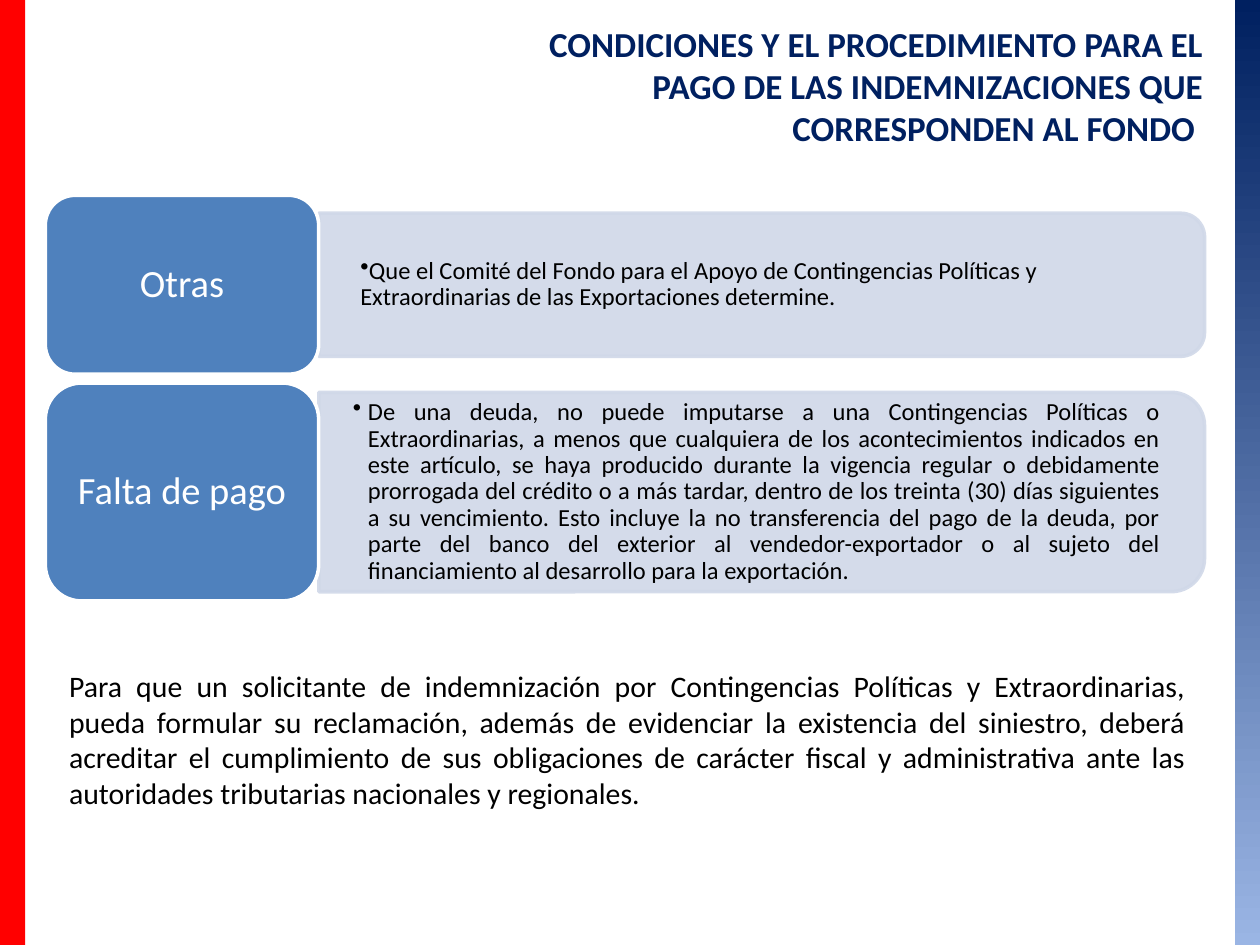
import dataclasses

import lxml.etree
import pptx
import pptx.dml.color
import pptx.enum.shapes
import pptx.enum.text
import pptx.oxml.ns
import pptx.util

Inches = pptx.util.Inches
Pt = pptx.util.Pt
Align = pptx.enum.text.PP_ALIGN
Anchor = pptx.enum.text.MSO_ANCHOR
Shape = pptx.enum.shapes.MSO_SHAPE
qn = pptx.oxml.ns.qn


@dataclasses.dataclass(frozen=True)
class Theme:
    font: str = "Calibri"
    red: str = "FF0000"
    navy: str = "002060"
    sky: str = "9AB5E4"
    tile: str = "4F81BD"
    panel: str = "D0D8E8"
    white: str = "FFFFFF"
    black: str = "000000"
    title_size: int = 20
    tile_size: int = 22
    detail_size: int = 14
    closing_size: int = 17


@dataclasses.dataclass(frozen=True)
class Box:
    left: float
    top: float
    width: float
    height: float

    def lengths(self):
        return [Inches(value) for value in dataclasses.astuple(self)]


@dataclasses.dataclass(frozen=True)
class Topic:
    label: str
    detail: str
    box: Box
    panel_share: float  # panel height as a share of the row height
    margin: float
    indent: float
    alignment: Align


THEME = Theme()
WIDTH, HEIGHT = 10, 7.5
BAR_WIDTH = 0.02 * WIDTH
TILE_WIDTH = 2.17
ROW_LEFT, ROW_WIDTH = 0.36, 9.2

TOPICS = [
    Topic("Otras",
          "Que el Comité del Fondo para el Apoyo de Contingencias Políticas y "
          "Extraordinarias de las Exportaciones determine.",
          Box(ROW_LEFT, 1.55, ROW_WIDTH, 1.42), 0.8, 0.06, 0, Align.LEFT),
    Topic("Falta de pago",
          "De una deuda, no puede imputarse a una Contingencias Políticas o "
          "Extraordinarias, a menos que cualquiera de los acontecimientos "
          "indicados en este artículo, se haya producido durante la vigencia "
          "regular o debidamente prorrogada del crédito o a más tardar, dentro "
          "de los treinta (30) días siguientes a su vencimiento. Esto incluye "
          "la no transferencia del pago de la deuda, por parte del banco del "
          "exterior al vendedor-exportador o al sujeto del financiamiento al "
          "desarrollo para la exportación.",
          Box(ROW_LEFT, 3.04, ROW_WIDTH, 1.73), 0.915, 0.12, -0.12,
          Align.JUSTIFY),
]
TITLE = ("CONDICIONES Y EL PROCEDIMIENTO PARA EL PAGO DE LAS "
         "INDEMNIZACIONES QUE CORRESPONDEN AL FONDO ")
CLOSING = ("Para que un solicitante de indemnización por Contingencias Políticas "
           "y Extraordinarias, pueda formular su reclamación, además de "
           "evidenciar la existencia del siniestro, deberá acreditar el "
           "cumplimiento de sus obligaciones de carácter fiscal y "
           "administrativa ante las autoridades tributarias nacionales y "
           "regionales.")


def rgb(value):
    return pptx.dml.color.RGBColor.from_string(value)


def write(shape, text, size, color, alignment, anchor=Anchor.TOP,
          insets=(0.1, 0.05), spacing=1.0, bold=False):
    frame = shape.text_frame
    frame.word_wrap = True
    frame.auto_size = pptx.enum.text.MSO_AUTO_SIZE.NONE
    frame.vertical_anchor = anchor
    frame.margin_left = frame.margin_right = Inches(insets[0])
    frame.margin_top = frame.margin_bottom = Inches(insets[1])
    paragraph = frame.paragraphs[0]
    paragraph.alignment = alignment
    paragraph.line_spacing = spacing
    run = paragraph.add_run()
    run.text = text
    run.font.name = THEME.font
    run.font.size = Pt(size)
    run.font.bold = bold
    run.font.color.rgb = rgb(color)
    return paragraph


def add_bullet(paragraph, margin, indent):
    properties = paragraph._p.get_or_add_pPr()
    properties.set("marL", str(Inches(margin)))
    properties.set("indent", str(Inches(indent)))
    lxml.etree.SubElement(properties, qn("a:buChar")).set("char", "•")


def add_block(slide, kind, box, fill, line=None):
    shape = slide.shapes.add_shape(kind, *box.lengths())
    shape.shadow.inherit = False
    shape.fill.solid()
    shape.fill.fore_color.rgb = rgb(fill)
    if line:
        shape.line.color.rgb = rgb(line)
        shape.line.width = Pt(2)
    else:
        shape.line.fill.background()
    return shape


def make_translucent(shape, percent):
    for color in shape._element.spPr.iter(qn("a:srgbClr")):
        lxml.etree.SubElement(color, qn("a:alpha")).set("val", str(percent * 1000))


def add_side_bars(slide, box):
    # Red bar at the left edge, blue gradient at the right edge
    add_block(slide, Shape.RECTANGLE,
              Box(box.left, box.top, BAR_WIDTH, box.height), THEME.red)
    bar = add_block(slide, Shape.RECTANGLE,
                    Box(box.left + box.width - BAR_WIDTH, box.top,
                        BAR_WIDTH, box.height), THEME.navy)
    bar.fill.gradient()
    bar.fill.gradient_angle = 270
    for stop, color in zip(bar.fill.gradient_stops, (THEME.navy, THEME.sky)):
        stop.color.rgb = rgb(color)


def add_title(slide, box):
    title = slide.shapes.title
    title.left, title.top, title.width, title.height = box.lengths()
    write(title, TITLE, THEME.title_size, THEME.navy, Align.RIGHT, bold=True)


def add_topic(slide, topic):
    box = topic.box
    length = box.width - TILE_WIDTH
    thickness = box.height * topic.panel_share
    left = box.left + TILE_WIDTH
    middle = box.top + box.height / 2

    # Panel: an upright shape turned a quarter so its round corners face right
    panel = add_block(slide, Shape.ROUND_2_SAME_RECTANGLE,
                      Box(left + (length - thickness) / 2, middle - length / 2,
                          thickness, length), THEME.panel, THEME.panel)
    panel.rotation = 90
    make_translucent(panel, 90)

    # Detail text, kept clear of the round corners
    corner = 0.05 * thickness
    detail = slide.shapes.add_textbox(
        *Box(left, middle - thickness / 2 + corner,
             length - corner, thickness - 2 * corner).lengths())
    paragraph = write(detail, topic.detail, THEME.detail_size, THEME.black,
                      topic.alignment, Anchor.MIDDLE, (0.27, 0.14), 0.9)
    add_bullet(paragraph, topic.margin, topic.indent)

    # Label tile
    tile = add_block(slide, Shape.ROUNDED_RECTANGLE,
                     Box(box.left, box.top, TILE_WIDTH, box.height),
                     THEME.tile, THEME.white)
    write(tile, topic.label, THEME.tile_size, THEME.white, Align.CENTER,
          Anchor.MIDDLE, (0.09, 0.05), 0.9)


def add_closing(slide, box):
    closing = slide.shapes.add_textbox(*box.lengths())
    write(closing, CLOSING, THEME.closing_size, THEME.black, Align.JUSTIFY)


def main():
    presentation = pptx.Presentation()
    presentation.slide_width = Inches(WIDTH)
    presentation.slide_height = Inches(HEIGHT)
    title_only = presentation.slide_layouts[5]
    slide = presentation.slides.add_slide(title_only)
    add_side_bars(slide, Box(0, 0, WIDTH, HEIGHT))
    add_title(slide, Box(3.82, 0.13, 5.83, 1.11))
    for topic in TOPICS:
        add_topic(slide, topic)
    add_closing(slide, Box(0.45, 5.25, 9.06, 1.25))
    presentation.save("out.pptx")


if __name__ == "__main__":
    main()
